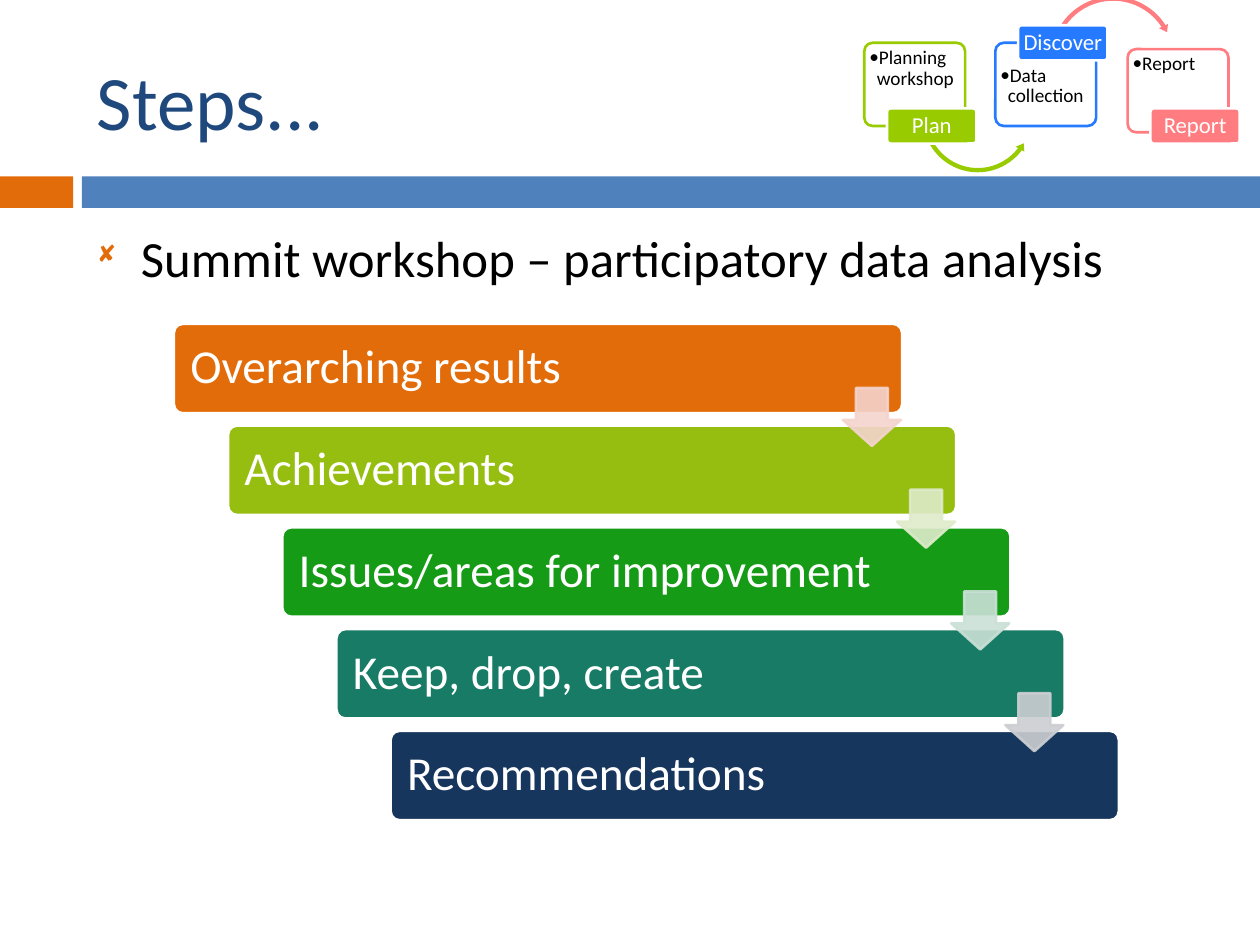
"""Build the Steps slide: a staircase of workshop topics with a small process overview."""
from lxml.etree import SubElement
from pptx import Presentation
from pptx.dml.color import RGBColor
from pptx.enum.shapes import MSO_SHAPE as SHAPE
from pptx.enum.text import MSO_ANCHOR as ANCHOR, PP_ALIGN as ALIGN
from pptx.oxml.ns import qn
from pptx.util import Inches, Pt

WHITE = RGBColor(0xFF, 0xFF, 0xFF)
BLACK = RGBColor(0x00, 0x00, 0x00)
NAVY = RGBColor(0x1F, 0x49, 0x7D)
ORANGE = RGBColor(0xE3, 0x6C, 0x0A)
STEEL = RGBColor(0x4F, 0x81, 0xBD)
OLIVE = RGBColor(0x96, 0xBE, 0x11)
GREEN = RGBColor(0x15, 0x9B, 0x16)
TEAL = RGBColor(0x17, 0x7B, 0x65)
DARK_BLUE = RGBColor(0x17, 0x36, 0x5D)
PALE_PINK = RGBColor(0xF4, 0xD4, 0xCC)
PALE_LIME = RGBColor(0xDF, 0xEB, 0xCA)
PALE_GREEN = RGBColor(0xCA, 0xE0, 0xD6)
PALE_GREY = RGBColor(0xCC, 0xCE, 0xD2)
LIME = RGBColor(0x99, 0xCC, 0x00)
BLUE = RGBColor(0x25, 0x7A, 0xFF)
CORAL = RGBColor(0xFF, 0x7C, 0x80)

prs = Presentation()
prs.slide_width, prs.slide_height = Inches(10), Inches(7.5)
slide = prs.slides.add_slide(prs.slide_layouts[6])


def add_block(kind, box, fill, line=None, adjust=(), alpha=100):
    block = slide.shapes.add_shape(kind, *map(Inches, box))
    block.shadow.inherit = False
    for i, value in enumerate(adjust):
        block.adjustments[i] = value
    block.fill.solid()
    block.fill.fore_color.rgb = fill
    if line is None:
        block.line.fill.background()
    else:
        block.line.color.rgb = line
        block.line.width = Pt(1.5)
    if alpha < 100:
        for color in block._element.spPr.iter(qn("a:srgbClr")):
            if color.get("val") == str(fill):
                SubElement(color, qn("a:alpha")).set("val", str(alpha * 1000))
    return block


def write(holder, text, size, color, insets=(0.1, 0.05, 0.1, 0.05), anchor=ANCHOR.MIDDLE,
          align=ALIGN.LEFT, spacing=1.0, bullet=None, indent=0, bullet_color=None,
          bullet_size=100, bullet_font="Calibri"):
    frame = holder.text_frame
    frame.text = text
    frame.word_wrap = True
    frame.vertical_anchor = anchor
    (frame.margin_left, frame.margin_top,
     frame.margin_right, frame.margin_bottom) = map(Inches, insets)
    paragraph = frame.paragraphs[0]
    paragraph.alignment = align
    paragraph.line_spacing = spacing
    font = paragraph.runs[0].font
    font.name, font.size, font.color.rgb = "Calibri", Pt(size), color
    if bullet:
        props = paragraph._p.get_or_add_pPr()
        props.set("marL", str(Inches(indent)))
        props.set("indent", str(-Inches(indent)))
        if bullet_color is not None:
            tint = SubElement(props, qn("a:buClr"))
            SubElement(tint, qn("a:srgbClr")).set("val", str(bullet_color))
        SubElement(props, qn("a:buSzPct")).set("val", str(bullet_size * 1000))
        SubElement(props, qn("a:buFont")).set("typeface", bullet_font)
        SubElement(props, qn("a:buChar")).set("char", bullet)
    return paragraph


add_block(SHAPE.RECTANGLE, (0, 1.4, 0.58, 0.25), ORANGE)
add_block(SHAPE.RECTANGLE, (0.65, 1.4, 9.35, 0.25), STEEL)

title = slide.shapes.add_textbox(Inches(0.67), Inches(0.25), Inches(8.92), Inches(1.08))
write(title, "Steps...", 44, NAVY)

body = slide.shapes.add_textbox(Inches(0.67), Inches(1.75), Inches(8.92), Inches(4.92))
topic = write(body, "Summit workshop – participatory data analysis", 29, BLACK, anchor=ANCHOR.TOP,
              bullet="◻", indent=0.35, bullet_color=ORANGE, bullet_size=60,
              bullet_font="Wingdings")
topic.space_before = Pt(7)

stairs = [
    ("Overarching results", ORANGE),
    ("Achievements", OLIVE),
    ("Issues/areas for improvement", GREEN),
    ("Keep, drop, create", TEAL),
    ("Recommendations", DARK_BLUE),
]
run = 0.43
drop = (5.8 - 2.57) / (len(stairs) - 1)
for i, (text, color) in enumerate(stairs):
    stair = add_block(SHAPE.ROUNDED_RECTANGLE, (1.38 + run * i, 2.57 + drop * i, 5.78, 0.71),
                      color, WHITE, [0.1])
    write(stair, text, 27, WHITE, insets=(0.11,) * 4, spacing=0.9)

for i, color in enumerate([PALE_PINK, PALE_LIME, PALE_GREEN, PALE_GREY]):
    add_block(SHAPE.DOWN_ARROW, (6.69 + run * i, 3.08 + drop * i, 0.46, 0.46),
              color, color, [0.55, 0.45], alpha=90)

plan_arrow = (SHAPE.LEFT_CIRCULAR_ARROW, (7.3, 0.47, 0.92, 0.92), LIME,
              [0.037, 4.567, 22.322, 90.245, 0.043])
discover_arrow = (SHAPE.CIRCULAR_ARROW, (8.32, -0.05, 1.03, 1.03), CORAL,
                  [0.033, 4.071, 196.344, 127.925, 0.038])
phases = [
    ("Plan", "Planning workshop", LIME, (6.86, 0.34), (7.04, 0.86), 0.02, plan_arrow),
    ("Discover", "Data collection", BLUE, (7.9, 0.34), (8.08, 0.2), 0.16, discover_arrow),
    ("Report", "Report", CORAL, (8.95, 0.39), (9.13, 0.86), 0.02, None),
]
for name, task, color, card_at, label_at, top_inset, arrow in phases:
    card = add_block(SHAPE.ROUNDED_RECTANGLE, (*card_at, 0.8, 0.66), WHITE, color, [0.1], alpha=90)
    write(card, task, 11, BLACK, insets=(0.02, top_inset, 0.02, 0.02), anchor=ANCHOR.TOP,
          spacing=0.9, bullet="••", indent=0.06)
    if arrow:
        kind, box, tint, adjust = arrow
        add_block(kind, box, tint, adjust=adjust)
    label = add_block(SHAPE.ROUNDED_RECTANGLE, (*label_at, 0.71, 0.28), color, WHITE, [0.1])
    write(label, name, 13, WHITE, insets=(0.03, 0.02, 0.03, 0.02), align=ALIGN.CENTER, spacing=0.9)

prs.save("out.pptx")
